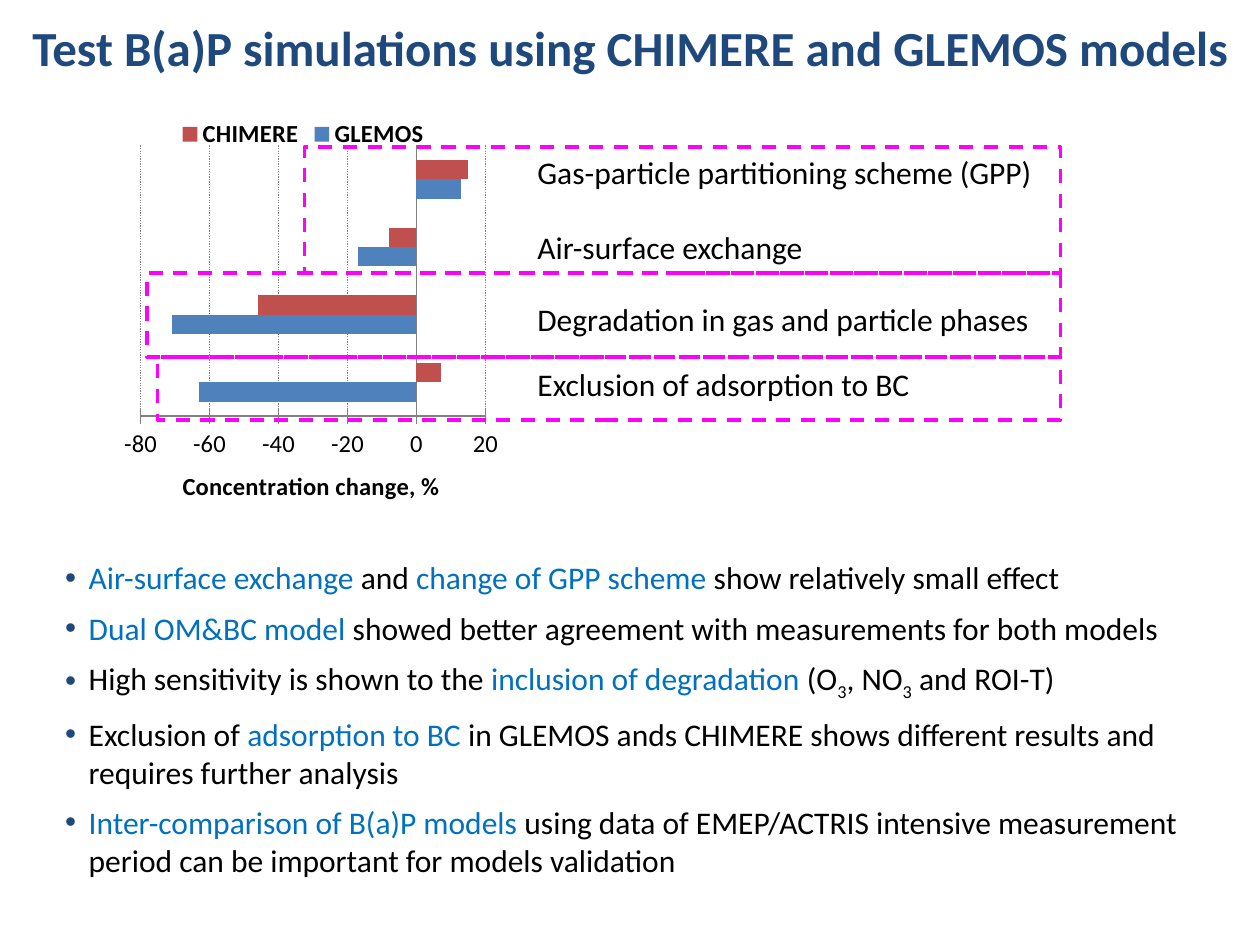
from typing import NamedTuple

from lxml import etree
from pptx import Presentation
from pptx.chart.data import CategoryChartData
from pptx.dml.color import RGBColor
from pptx.enum.chart import XL_CHART_TYPE, XL_LEGEND_POSITION, XL_TICK_LABEL_POSITION, XL_TICK_MARK
from pptx.enum.dml import MSO_LINE
from pptx.enum.shapes import MSO_SHAPE
from pptx.enum.text import MSO_ANCHOR, MSO_AUTO_SIZE, PP_ALIGN
from pptx.oxml.ns import qn
from pptx.util import Pt

BAR_CLUSTERED = XL_CHART_TYPE.BAR_CLUSTERED
LEGEND_TOP = XL_LEGEND_POSITION.TOP
NO_LABELS = XL_TICK_LABEL_POSITION.NONE
TICK_NONE, TICK_CROSS = XL_TICK_MARK.NONE, XL_TICK_MARK.CROSS
DASH, DOT = MSO_LINE.DASH, MSO_LINE.ROUND_DOT
RECTANGLE = MSO_SHAPE.RECTANGLE
TOP = MSO_ANCHOR.TOP
CENTER, LEFT = PP_ALIGN.CENTER, PP_ALIGN.LEFT

FONT = "Calibri"
BLACK, NAVY, BLUE, MAGENTA, GRAY = "000000", "1F497D", "0070C0", "FF00FF", "808080"


class Box(NamedTuple):
    left: float
    top: float
    width: float
    height: float

    def lengths(self) -> tuple:
        return tuple(Pt(value) for value in self)


class Label(NamedTuple):
    text: str
    top: float


class Series(NamedTuple):
    name: str
    values: tuple
    color: str


class Piece(NamedTuple):
    text: str
    color: str = BLACK
    subscript: bool = False


TITLE = "Test B(a)P simulations using CHIMERE and GLEMOS models"
TITLE_BOX = Box(0, 6.5, 720, 41)
BODY_BOX = Box(30, 315.5, 660, 195)
CHART_BOX = Box(60, 60, 226.5, 231)
PLOT_LAYOUT = {"x": 0.09, "y": 0.1, "w": 0.87, "h": 0.67}

SERIES = [
    Series("GLEMOS", (-63, -71, -17, 13), "4F81BD"),
    Series("CHIMERE", (7, -46, -8, 15), "C0504D"),
]
LABELS = [
    Label("Gas-particle partitioning scheme (GPP)", 84),
    Label("Air-surface exchange", 127),
    Label("Degradation in gas and particle phases", 168),
    Label("Exclusion of adsorption to BC", 205),
]
FRAMES = [
    Box(174, 84, 432, 72),
    Box(84, 156, 522, 48),
    Box(90, 204, 516, 36),
]
BULLETS = [
    [Piece("Air-surface exchange ", BLUE), Piece("and"),
     Piece(" change of GPP scheme ", BLUE), Piece("show relatively small effect")],
    [Piece("Dual OM&BC model", BLUE),
     Piece(" showed better agreement with measurements for both models")],
    [Piece("High sensitivity is shown to the "), Piece("inclusion of degradation", BLUE),
     Piece(" (O"), Piece("3", subscript=True), Piece(", NO"), Piece("3", subscript=True),
     Piece(" and ROI-T)")],
    [Piece("Exclusion of "), Piece("adsorption to BC ", BLUE),
     Piece("in GLEMOS ands CHIMERE shows different results and requires further analysis")],
    [Piece("Inter-comparison of B(a)P models ", BLUE),
     Piece("using data of EMEP/ACTRIS intensive measurement period "
           "can be important for models validation")],
]


def rgb(color: str) -> RGBColor:
    return RGBColor.from_string(color)


def format_font(font, size: float, color: str, bold: bool = False) -> None:
    font.name = FONT
    font.size = Pt(size)
    font.bold = bold
    font.color.rgb = rgb(color)


def place(shape, box: Box) -> None:
    shape.left, shape.top, shape.width, shape.height = box.lengths()


def prepare_frame(text_frame) -> None:
    text_frame.word_wrap = True
    text_frame.auto_size = MSO_AUTO_SIZE.NONE
    text_frame.vertical_anchor = TOP


def fill_title(shape) -> None:
    place(shape, TITLE_BOX)
    prepare_frame(shape.text_frame)
    shape.text_frame.text = TITLE
    paragraph = shape.text_frame.paragraphs[0]
    paragraph.alignment = CENTER
    format_font(paragraph.runs[0].font, 28, NAVY, bold=True)


def set_bullet(paragraph, color: str, indent: float) -> None:
    properties = paragraph._p.get_or_add_pPr()
    properties.set("marL", str(Pt(indent)))
    properties.set("indent", str(-Pt(indent)))
    bullet_color = etree.SubElement(properties, qn("a:buClr"))
    etree.SubElement(bullet_color, qn("a:srgbClr"), val=color)
    etree.SubElement(properties, qn("a:buFont"), typeface="Arial")
    etree.SubElement(properties, qn("a:buChar"), char="•")


def fill_bullets(shape) -> None:
    place(shape, BODY_BOX)
    text_frame = shape.text_frame
    prepare_frame(text_frame)
    for index, pieces in enumerate(BULLETS):
        paragraph = text_frame.add_paragraph() if index else text_frame.paragraphs[0]
        paragraph.alignment = LEFT
        paragraph.space_before = Pt(7.2)
        set_bullet(paragraph, NAVY, 13.5)
        for piece in pieces:
            run = paragraph.add_run()
            run.text = piece.text
            format_font(run.font, 18, piece.color)
            if piece.subscript:
                run.font._element.set("baseline", "-25000")


def set_plot_layout(chart) -> None:
    """Fix the inner plot area as fractions of the chart."""
    plot_area = chart._chartSpace.chart.plotArea
    for old_layout in plot_area.findall(qn("c:layout")):
        plot_area.remove(old_layout)
    layout = etree.Element(qn("c:layout"))
    plot_area.insert(0, layout)
    manual = etree.SubElement(layout, qn("c:manualLayout"))
    etree.SubElement(manual, qn("c:layoutTarget"), val="inner")
    for side in ("x", "y"):
        etree.SubElement(manual, qn(f"c:{side}Mode"), val="edge")
    for name, fraction in PLOT_LAYOUT.items():
        etree.SubElement(manual, qn(f"c:{name}"), val=str(fraction))


def add_sensitivity_chart(slide) -> None:
    data = CategoryChartData()
    data.categories = ["1", "2", "3", "4"]
    for series in SERIES:
        data.add_series(series.name, series.values)
    chart = slide.shapes.add_chart(BAR_CLUSTERED, *CHART_BOX.lengths(), data).chart
    format_font(chart.font, 14, BLACK)
    chart.has_title = False
    chart.has_legend = True
    chart.legend.position = LEGEND_TOP
    chart.legend.include_in_layout = False
    format_font(chart.legend.font, 14, BLACK, bold=True)

    plot = chart.plots[0]
    plot.gap_width, plot.overlap = 150, 0
    plot.vary_by_categories = False
    for drawn, series in zip(plot.series, SERIES):
        drawn.invert_if_negative = False
        drawn.format.fill.solid()
        drawn.format.fill.fore_color.rgb = rgb(series.color)

    category_axis, value_axis = chart.category_axis, chart.value_axis
    category_axis.tick_label_position = NO_LABELS
    category_axis.major_tick_mark = TICK_NONE
    value_axis.major_tick_mark = TICK_CROSS
    value_axis.minimum_scale, value_axis.maximum_scale = -80, 20
    value_axis.major_unit = 20
    value_axis.tick_labels.number_format = "0"
    value_axis.tick_labels.number_format_is_linked = False
    value_axis.has_major_gridlines = True
    gridline = value_axis.major_gridlines.format.line
    gridline.dash_style = DOT
    for line in (category_axis.format.line, value_axis.format.line, gridline):
        line.color.rgb = rgb(GRAY)
        line.width = Pt(0.75)
    title_frame = value_axis.axis_title.text_frame
    title_frame.text = "Concentration change, %"
    format_font(title_frame.paragraphs[0].runs[0].font, 14, BLACK, bold=True)
    set_plot_layout(chart)


def add_label(slide, label: Label) -> None:
    text_box = slide.shapes.add_textbox(*Box(300, label.top, 306, 29).lengths())
    prepare_frame(text_box.text_frame)
    text_box.text_frame.text = label.text
    format_font(text_box.text_frame.paragraphs[0].runs[0].font, 18, BLACK)


def add_dashed_frame(slide, box: Box) -> None:
    frame = slide.shapes.add_shape(RECTANGLE, *box.lengths())
    frame.shadow.inherit = False
    frame.fill.background()
    frame.line.color.rgb = rgb(MAGENTA)
    frame.line.width = Pt(2)
    frame.line.dash_style = DASH


def main() -> None:
    presentation = Presentation()
    presentation.slide_width, presentation.slide_height = Pt(720), Pt(540)
    slide = presentation.slides.add_slide(presentation.slide_layouts[1])
    fill_title(slide.shapes.title)
    fill_bullets(slide.placeholders[1])
    add_sensitivity_chart(slide)
    for label in LABELS:
        add_label(slide, label)
    for box in FRAMES:
        add_dashed_frame(slide, box)
    presentation.save("out.pptx")


if __name__ == "__main__":
    main()
